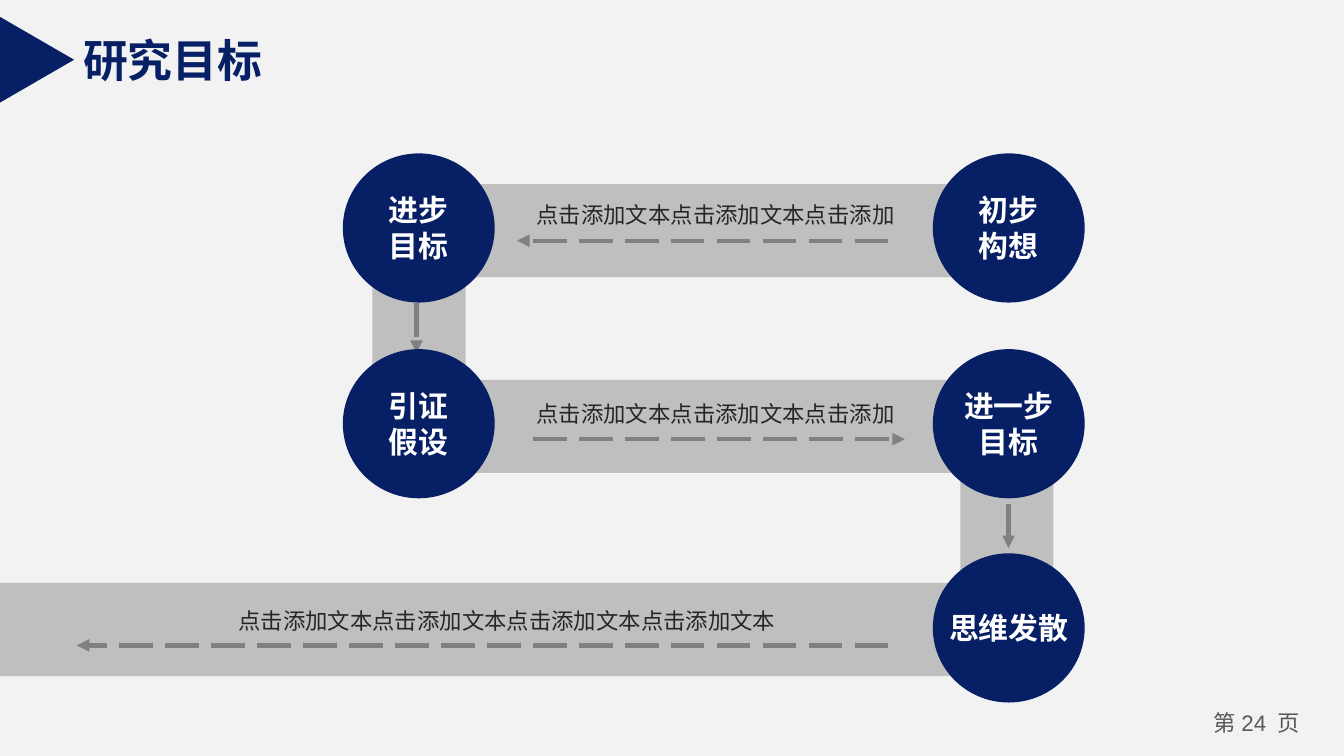
"""Build the research goals slide: a winding path of five steps."""
from lxml import etree
from pptx import Presentation
from pptx import util as u
from pptx.dml.color import RGBColor
from pptx.enum import dml, shapes, text
from pptx.oxml.ns import qn

NAVY = RGBColor(0x07, 0x1F, 0x65)
BAND = RGBColor(0xBF, 0xBF, 0xBF)
ARROW = RGBColor(0x80, 0x80, 0x80)
PAPER = RGBColor(0xF2, 0xF2, 0xF2)
WHITE = RGBColor(0xFF, 0xFF, 0xFF)
INK = RGBColor(0x26, 0x26, 0x26)
MUTED = RGBColor(0x59, 0x59, 0x59)

LATIN, HAN = "Arial", "Noto Sans CJK SC"
LEFT_X, RIGHT_X = 6.48, 17.63
CIRCLE_W, CIRCLE_H = 2.87, 2.82
ROWS = (2.9, 6.6, 10.46)
BAND_W = 1.76
LABEL_H = 0.71


def write(sp, paragraphs, size=12, color=INK, bold=False, font=HAN,
          align=text.PP_ALIGN.CENTER, anchor=text.MSO_ANCHOR.MIDDLE,
          wrap=True, margins=(0.18, 0.1)):
    """Fill a shape with paragraphs, each a list of runs."""
    tf = sp.text_frame
    tf.word_wrap = wrap
    tf.vertical_anchor = anchor
    tf.margin_left = tf.margin_right = u.Cm(margins[0])
    tf.margin_top = tf.margin_bottom = u.Cm(margins[1])
    for i, runs in enumerate(paragraphs):
        p = tf.paragraphs[0] if i == 0 else tf.add_paragraph()
        p.alignment = align
        for words in runs:
            r = p.add_run()
            r.text = words
            r.font.size = u.Pt(size)
            r.font.bold = bold
            r.font.color.rgb = color
            r.font.name = LATIN if words.strip().isdigit() else font
            ea = etree.SubElement(r._r.get_or_add_rPr(), qn("a:ea"))
            ea.set("typeface", HAN)


def add_box(s, x, y, w, h, paragraphs, **fmt):
    """Add a text box."""
    sp = s.shapes.add_textbox(u.Cm(x), u.Cm(y), u.Cm(w), u.Cm(h))
    write(sp, paragraphs, **fmt)


def add_solid(s, kind, x, y, w, h, color):
    """Add a flat filled shape without outline."""
    sp = s.shapes.add_shape(kind, u.Cm(x), u.Cm(y), u.Cm(w), u.Cm(h))
    sp.shadow.inherit = False
    sp.fill.solid()
    sp.fill.fore_color.rgb = color
    sp.line.fill.background()
    return sp


def add_band(s, x, y, w, h):
    """Add a grey stretch of the path."""
    add_solid(s, shapes.MSO_SHAPE.RECTANGLE, x, y, w, h, BAND)


def add_arrow(s, x1, y1, x2, y2):
    """Add a dashed arrow pointing at the second point."""
    cx = s.shapes.add_connector(shapes.MSO_CONNECTOR.STRAIGHT,
                                u.Cm(x1), u.Cm(y1), u.Cm(x2), u.Cm(y2))
    cx.line.color.rgb = ARROW
    cx.line.width = u.Pt(2.25)
    cx.line.dash_style = dml.MSO_LINE.LONG_DASH
    ln = cx.line._get_or_add_ln()
    etree.SubElement(ln, qn("a:tailEnd")).set("type", "triangle")
    etree.SubElement(cx._element.spPr, qn("a:effectLst"))


def add_step(s, x, y, *lines):
    """Add a round step with its name."""
    sp = add_solid(s, shapes.MSO_SHAPE.OVAL, x, y, CIRCLE_W, CIRCLE_H, NAVY)
    write(sp, [[line] for line in lines], size=16, color=WHITE, bold=True,
          font=LATIN, wrap=False)


def add_title(s, words):
    """Add the slide title and its pointer."""
    add_box(s, 1.32, 0.48, 3.94, 1.27, [[words]], size=24, color=NAVY,
            bold=True, font=LATIN, align=text.PP_ALIGN.LEFT,
            anchor=text.MSO_ANCHOR.TOP, wrap=False, margins=(0.25, 0.13))
    sp = add_solid(s, shapes.MSO_SHAPE.ISOSCELES_TRIANGLE,
                   -0.11, 0.43, 1.62, 1.4, NAVY)
    sp.rotation = 90


def main():
    """Build and save the slide."""
    prs = Presentation()
    prs.slide_width, prs.slide_height = u.Cm(25.4), u.Cm(14.29)
    s = prs.slides.add_slide(prs.slide_layouts[6])
    s.background.fill.solid()
    s.background.fill.fore_color.rgb = PAPER

    add_box(s, 22.61, 13.31, 2.29, 0.76, [["第 ", "24 ", " 页"]],
            color=MUTED, anchor=text.MSO_ANCHOR.TOP)

    for x, y, w, h in ((0, 11.02, 19.89, BAND_W),
                       (7.7, 7.18, 12.19, BAND_W),
                       (18.15, 8.03, BAND_W, 4.85),
                       (8.71, 3.48, 11.2, BAND_W),
                       (7.04, 3.48, BAND_W, 5.46)):
        add_band(s, x, y, w, h)

    for ends in ((16.79, 12.2, 1.45, 12.2),
                 (10.08, 8.3, 17.1, 8.3),
                 (19.06, 9.52, 19.06, 10.36),
                 (16.79, 4.55, 9.77, 4.55),
                 (7.87, 5.73, 7.87, 6.67)):
        add_arrow(s, *ends)

    for x, row, *lines in ((RIGHT_X, 0, "初步", "构想"),
                           (LEFT_X, 0, "进步", "目标"),
                           (LEFT_X, 1, "引证", "假设"),
                           (RIGHT_X, 1, "进一步", "目标"),
                           (RIGHT_X, 2, "思维发散")):
        add_step(s, x, ROWS[row], *lines)

    short = "点击添加文本点击添加文本点击添加"
    for x, y, w, words in ((9.83, 3.71, 7.39, short),
                           (9.83, 7.46, 7.39, short),
                           (2.41, 11.38, 14.35, "点击添加文本" * 4)):
        add_box(s, x, y, w, LABEL_H, [[words]])

    add_title(s, "研究目标")
    prs.save("out.pptx")


if __name__ == "__main__":
    main()
